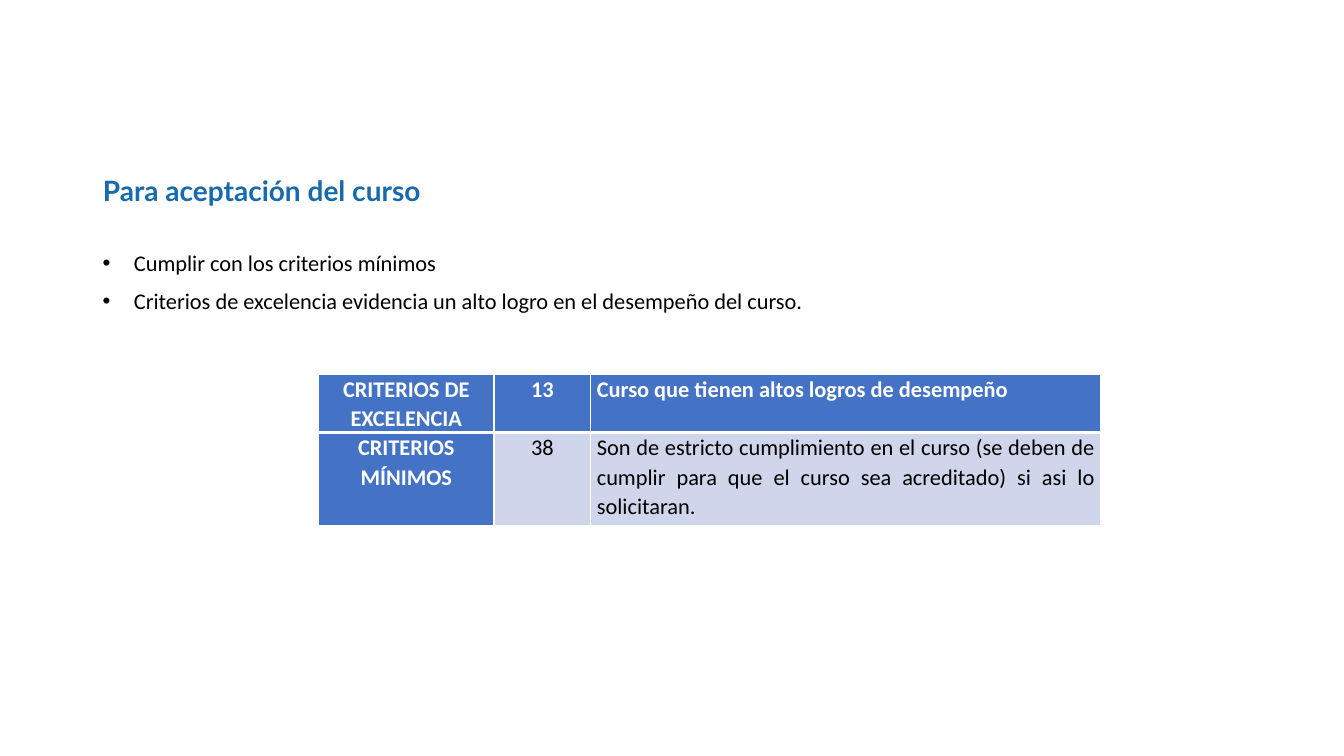
from lxml import etree
from pptx import Presentation, util as u
from pptx.dml.color import RGBColor
from pptx.enum import text as t
from pptx.oxml.ns import qn

SLIDE_W, SLIDE_H = 13.33, 7.5
LEFT = 0.92
WHITE, BLACK, HEADING, ACCENT, BAND = "FFFFFF", "000000", "186AAD", "4472C4", "CFD5EA"

HEADING_TEXT = "Para aceptación del curso"
REQUIREMENTS = [
    "Cumplir con los criterios mínimos",
    "Criterios de excelencia evidencia un alto logro en el desempeño del curso.",
]
CRITERIA = [
    ["CRITERIOS DE EXCELENCIA", "13", "Curso que tienen altos logros de desempeño"],
    ["CRITERIOS MÍNIMOS", "38",
     "Son de estricto cumplimiento en el curso (se deben de cumplir para que el curso "
     "sea acreditado) si asi lo solicitaran."],
]
COLUMN_WIDTHS = [1.74, 0.96, 5.06]
ROW_HEIGHTS = [0.46, 0.92]


def color(hex_value):
    return RGBColor.from_string(hex_value)


def apply(target, values):
    for name, value in values.items():
        setattr(target, name, value)


def format_paragraph(paragraph, layout, font, font_color):
    apply(paragraph, layout)
    apply(paragraph.font, font)
    paragraph.font.color.rgb = color(font_color)


def add_heading(slide, left, top, width, height):
    title = slide.shapes.title
    apply(title, {"left": u.Inches(left), "top": u.Inches(top),
                  "width": u.Inches(width), "height": u.Inches(height)})
    frame = title.text_frame
    frame.text = HEADING_TEXT
    apply(frame, {"word_wrap": True, "auto_size": t.MSO_AUTO_SIZE.NONE,
                  "vertical_anchor": t.MSO_ANCHOR.BOTTOM,
                  "margin_bottom": u.Inches(0.39)})
    format_paragraph(frame.paragraphs[0],
                     {"alignment": t.PP_ALIGN.LEFT, "line_spacing": 0.9},
                     {"name": "Lato", "size": u.Pt(20), "bold": True}, HEADING)


def add_bullet(paragraph, indent):
    properties = paragraph._p.get_or_add_pPr()
    properties.set("marL", str(u.Inches(indent)))
    properties.set("indent", str(-u.Inches(indent)))
    etree.SubElement(properties, qn("a:buFont"), typeface="Arial")
    etree.SubElement(properties, qn("a:buChar"), char="•")


def add_requirements(slide, left, top, width, height):
    box = slide.shapes.add_textbox(*map(u.Inches, (left, top, width, height)))
    frame = box.text_frame
    frame.word_wrap = True
    for index, requirement in enumerate(REQUIREMENTS):
        paragraph = frame.add_paragraph() if index else frame.paragraphs[0]
        paragraph.text = requirement
        add_bullet(paragraph, 0.31)
        format_paragraph(paragraph,
                         {"line_spacing": 0.9, "space_before": u.Pt(10 if index else 0)},
                         {"name": "Calibri", "size": u.Pt(16)}, BLACK)


def add_borders(cell, widths):
    properties = cell._tc.get_or_add_tcPr()
    for side, width in widths.items():
        line = etree.SubElement(properties, qn(f"a:ln{side}"), w=str(u.Pt(width)))
        fill = etree.SubElement(line, qn("a:solidFill"))
        etree.SubElement(fill, qn("a:srgbClr"), val=WHITE)


def add_criteria_table(slide, left, top):
    table = slide.shapes.add_table(
        len(ROW_HEIGHTS), len(COLUMN_WIDTHS), u.Inches(left), u.Inches(top),
        u.Inches(sum(COLUMN_WIDTHS)), u.Inches(sum(ROW_HEIGHTS))).table
    for column, width in zip(table.columns, COLUMN_WIDTHS):
        column.width = u.Inches(width)
    for row, height in zip(table.rows, ROW_HEIGHTS):
        row.height = u.Inches(height)
    for r, entries in enumerate(CRITERIA):
        for c, entry in enumerate(entries):
            cell = table.cell(r, c)
            is_header = r == 0 or c == 0
            cell.text = entry
            apply(cell, {"margin_left": u.Inches(0.06), "margin_right": u.Inches(0.06),
                         "margin_top": 0, "margin_bottom": 0})
            add_borders(cell, {"L": 1, "R": 1, "T": 3 if r else 1, "B": 1 if r else 3})
            cell.fill.solid()
            cell.fill.fore_color.rgb = color(ACCENT if is_header else BAND)
            alignment = t.PP_ALIGN.JUSTIFY if c == 2 else t.PP_ALIGN.CENTER
            format_paragraph(cell.text_frame.paragraphs[0],
                             {"alignment": alignment, "line_spacing": 1.07},
                             {"name": "Calibri", "size": u.Pt(16), "bold": is_header},
                             WHITE if is_header else BLACK)


def main():
    deck = Presentation()
    apply(deck, {"slide_width": u.Inches(SLIDE_W), "slide_height": u.Inches(SLIDE_H)})
    slide = deck.slides.add_slide(deck.slide_layouts[5])
    add_heading(slide, LEFT, 0.75, 4.3, 1.7)
    add_criteria_table(slide, 3.16, 3.71)
    add_requirements(slide, LEFT, 2.45, 10.95, 3.97)
    deck.save("out.pptx")


if __name__ == "__main__":
    main()
